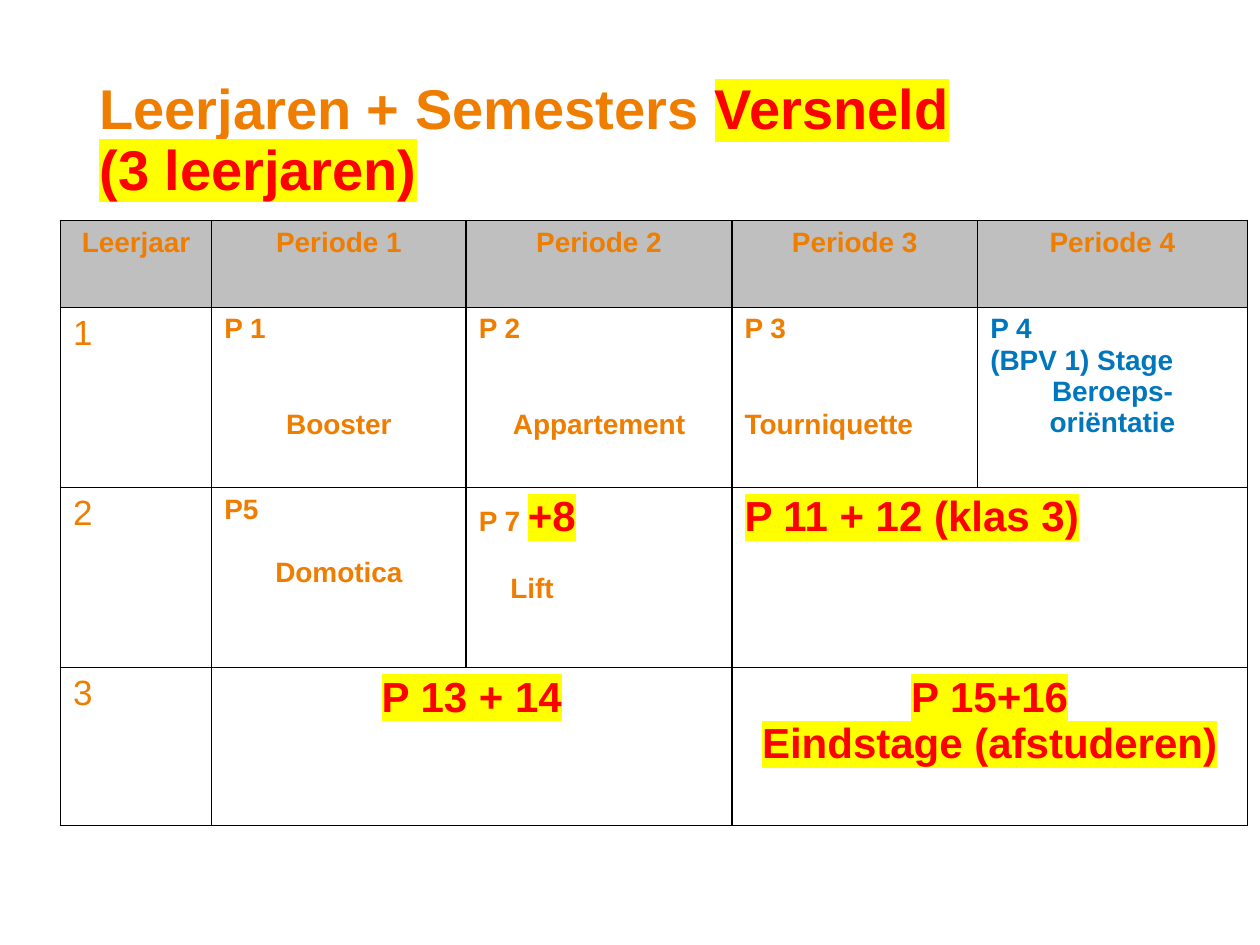
from lxml import etree
from pptx import Presentation
from pptx import util as u
from pptx.dml.color import RGBColor
from pptx.enum import text
from pptx.oxml.ns import qn

ORANGE, RED, BLUE = "EF7D00", "FF0000", "0076BD"
YELLOW, GREY, WHITE, BLACK = "FFFF00", "BFBFBF", "FFFFFF", "000000"
CENTER = text.PP_ALIGN.CENTER
BLANK_LINE = 18.4  # height in points of one 16 pt line

ACCENT = dict(size=24, color=RED, highlight=YELLOW)
CENTERED_ACCENT = dict(ACCENT, align=CENTER)


def rgb(hex_color):
    return RGBColor.from_string(hex_color)


def add_run(paragraph, words, size=16, color=ORANGE, bold=True, highlight=None):
    run = paragraph.add_run()
    run.text = words
    font = run.font
    font.size, font.bold, font.name = u.Pt(size), bold, "Arial"
    font.color.rgb = rgb(color)
    if highlight:
        mark = etree.Element(qn("a:highlight"))
        etree.SubElement(mark, qn("a:srgbClr"), val=highlight)
        run._r.rPr.find(qn("a:solidFill")).addnext(mark)


def add_line(frame, words, first=False, align=None, before=0, indent=0, **font):
    """Add a paragraph; its first run is words, more runs can follow."""
    paragraph = frame.paragraphs[0] if first else frame.add_paragraph()
    if indent:
        paragraph._p.get_or_add_pPr().set("marL", str(u.Inches(indent)))
    if align is not None:
        paragraph.alignment = align
    if before:
        paragraph.space_before = u.Pt(before)
    add_run(paragraph, words, **font)
    return paragraph


def add_borders(cell):
    properties = cell._tc.get_or_add_tcPr()
    for index, side in enumerate(("lnL", "lnR", "lnT", "lnB")):
        border = etree.Element(qn(f"a:{side}"), w=str(u.Pt(1)))
        fill = etree.SubElement(border, qn("a:solidFill"))
        etree.SubElement(fill, qn("a:srgbClr"), val=BLACK)
        properties.insert(index, border)


def add_title(slide, left, top, width, height):
    frame = slide.shapes.add_textbox(*map(u.Inches, (left, top, width, height))).text_frame
    frame.word_wrap = True
    frame.vertical_anchor = text.MSO_ANCHOR.MIDDLE
    title = add_line(frame, "Leerjaren + Semesters ", first=True, size=32)
    title.line_spacing = 0.9
    add_run(title, "Versneld", size=32, color=RED, highlight=YELLOW)
    title.add_line_break()
    add_run(title, "(3 leerjaren)", size=32, color=RED, highlight=YELLOW)


def fill_cell(cell, lines):
    for index, (words, style) in enumerate(lines):
        add_line(cell.text_frame, words, first=index == 0, **style)


def add_schedule(slide, left, top, columns, rows):
    box = map(u.Inches, (left, top, sum(columns), sum(rows)))
    table = slide.shapes.add_table(len(rows), len(columns), *box).table
    for column, width in zip(table.columns, columns):
        column.width = u.Inches(width)
    for row, height in zip(table.rows, rows):
        row.height = u.Inches(height)
    for r in range(len(rows)):
        for c in range(len(columns)):
            cell = table.cell(r, c)
            cell.fill.solid()
            cell.fill.fore_color.rgb = rgb(WHITE if r else GREY)
            add_borders(cell)

    for r, c in ((2, 3), (3, 1), (3, 3)):
        table.cell(r, c).merge(table.cell(r, c + 1))

    headings = ["Leerjaar"] + [f"Periode {number}" for number in range(1, 5)]
    for c, heading in enumerate(headings):
        fill_cell(table.cell(0, c), [(heading, dict(align=CENTER))])
    for year in range(1, 4):
        fill_cell(table.cell(year, 0), [(str(year), dict(size=20, bold=False))])

    two_down = dict(before=2 * BLANK_LINE)
    periods = {
        (1, 1): [("P 1", {}), ("Booster", dict(two_down, align=CENTER))],
        (1, 2): [("P 2", {}), ("Appartement", dict(two_down, align=CENTER))],
        (1, 3): [("P 3", {}), ("Tourniquette", two_down)],
        (1, 4): [("P 4", dict(color=BLUE)),
                 ("(BPV 1) Stage", dict(color=BLUE)),
                 ("Beroeps-oriëntatie", dict(color=BLUE, align=CENTER))],
        (2, 1): [("P5", {}), ("Domotica", dict(before=BLANK_LINE, align=CENTER))],
        (2, 2): [("P 7 ", {}), ("Lift", dict(before=BLANK_LINE, indent=0.25))],
        (2, 3): [("P 11 + 12 (klas 3)", ACCENT)],
        (3, 1): [("P 13 + 14", CENTERED_ACCENT)],
        (3, 3): [("P 15+16", CENTERED_ACCENT),
                 ("Eindstage (afstuderen)", CENTERED_ACCENT)],
    }
    for (r, c), lines in periods.items():
        fill_cell(table.cell(r, c), lines)
    add_run(table.cell(2, 2).text_frame.paragraphs[0], "+8", **ACCENT)


def main():
    deck = Presentation()
    deck.slide_width, deck.slide_height = u.Inches(10), u.Inches(7.5)
    slide = deck.slides.add_slide(deck.slide_layouts[6])
    add_title(slide, 0.69, 0.4, 8.62, 1.45)
    add_schedule(slide, 0.48, 1.75,
                 columns=(1.2, 2.02, 2.11, 1.95, 2.14),
                 rows=(0.69, 1.43, 1.43, 1.25))
    deck.save("out.pptx")


if __name__ == "__main__":
    main()
